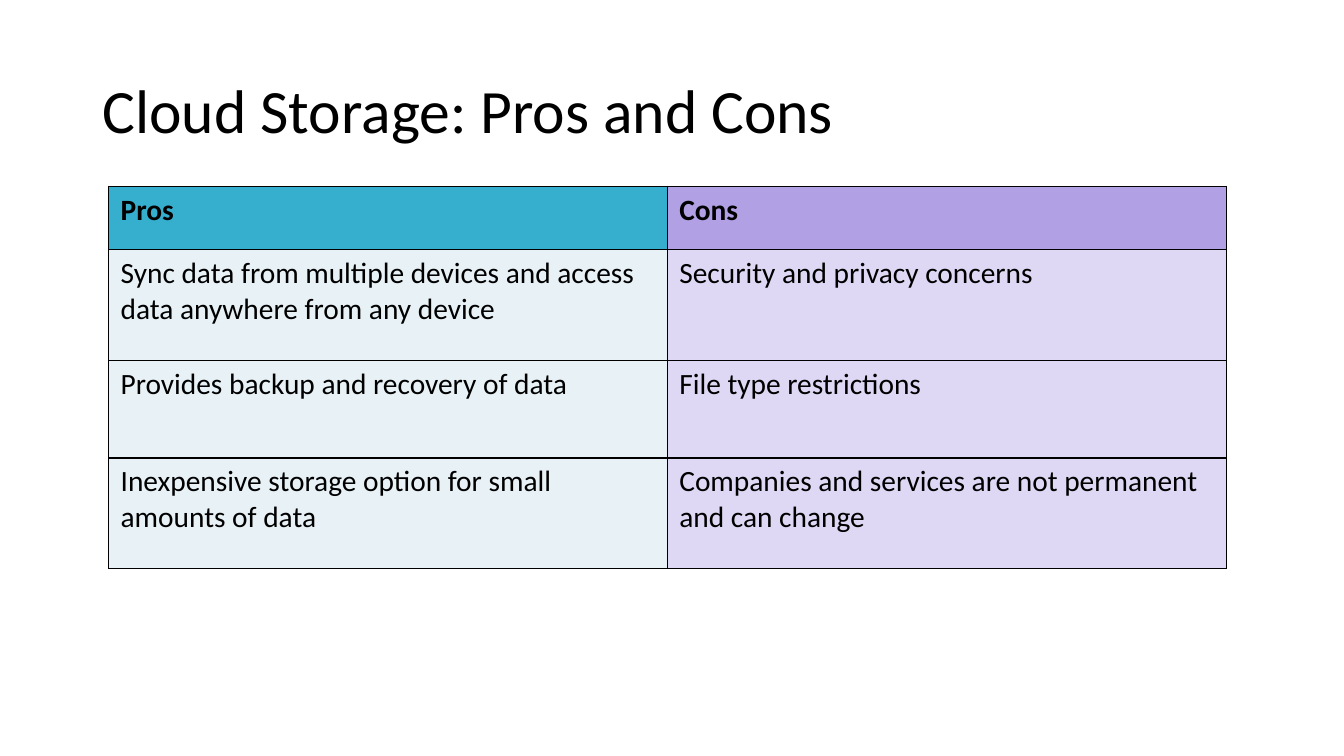
from lxml.etree import SubElement
from pptx import Presentation
from pptx.dml.color import RGBColor
from pptx.enum.text import MSO_ANCHOR, PP_ALIGN
from pptx.oxml.ns import qn
from pptx.util import Cm, Pt

BLACK = "000000"
HEADER_FILLS = ("36AFCE", "B2A0E4")
BODY_FILLS = ("E8F2F6", "DFD8F4")
ROW_HEIGHTS = (1.6, 2.79, 2.46, 2.79)
COLUMN_WIDTH = 14.08
PROS_AND_CONS = (
    ("Pros", "Cons"),
    ("Sync data from multiple devices and access data anywhere from any device",
     "Security and privacy concerns"),
    ("Provides backup and recovery of data", "File type restrictions"),
    ("Inexpensive storage option for small amounts of data",
     "Companies and services are not permanent and can change"),
)


def color(hex_string):
    return RGBColor.from_string(hex_string)


def write_text(frame, text, size, bold=False, line_spacing=1.0, anchor=MSO_ANCHOR.TOP):
    frame.word_wrap = True
    frame.vertical_anchor = anchor
    para = frame.paragraphs[0]
    para.alignment = PP_ALIGN.LEFT
    para.line_spacing = line_spacing
    span = para.add_run()
    span.text = text
    span.font.name = "Calibri"
    span.font.size = Pt(size)
    span.font.bold = bold
    span.font.color.rgb = color(BLACK)


def add_title(page, text):
    title = page.shapes.title
    title.left, title.top = Cm(2.33), Cm(1.01)
    title.width, title.height = Cm(29.21), Cm(3.68)
    write_text(title.text_frame, text, size=44, line_spacing=0.9, anchor=MSO_ANCHOR.MIDDLE)


def add_borders(cell, hex_string, width):
    properties = cell._tc.get_or_add_tcPr()
    for side in ("a:lnL", "a:lnR", "a:lnT", "a:lnB"):
        line = SubElement(properties, qn(side), w=str(Pt(width)))
        fill = SubElement(line, qn("a:solidFill"))
        SubElement(fill, qn("a:srgbClr"), val=hex_string)


def format_cell(cell, text, fill, bold):
    cell.margin_left = cell.margin_right = Cm(0.3)
    cell.margin_top = cell.margin_bottom = Cm(0.15)
    add_borders(cell, BLACK, 1)
    cell.fill.solid()
    cell.fill.fore_color.rgb = color(fill)
    write_text(cell.text_frame, text, size=21, bold=bold)


def add_comparison(page, rows):
    column_count = len(rows[0])
    table = page.shapes.add_table(
        len(rows), column_count, Cm(2.74), Cm(4.69),
        Cm(COLUMN_WIDTH * column_count), Cm(sum(ROW_HEIGHTS))).table
    table.horz_banding = False
    for column in table.columns:
        column.width = Cm(COLUMN_WIDTH)
    for row_index, (texts, height) in enumerate(zip(rows, ROW_HEIGHTS)):
        table.rows[row_index].height = Cm(height)
        is_header = row_index == 0
        fills = HEADER_FILLS if is_header else BODY_FILLS
        for column_index, (text, fill) in enumerate(zip(texts, fills)):
            format_cell(table.cell(row_index, column_index), text, fill, bold=is_header)


def main():
    deck = Presentation()
    deck.slide_width, deck.slide_height = Cm(33.87), Cm(19.05)
    page = deck.slides.add_slide(deck.slide_layouts.get_by_name("Title Only"))
    add_title(page, "Cloud Storage: Pros and Cons")
    add_comparison(page, PROS_AND_CONS)
    deck.save("out.pptx")


if __name__ == "__main__":
    main()
